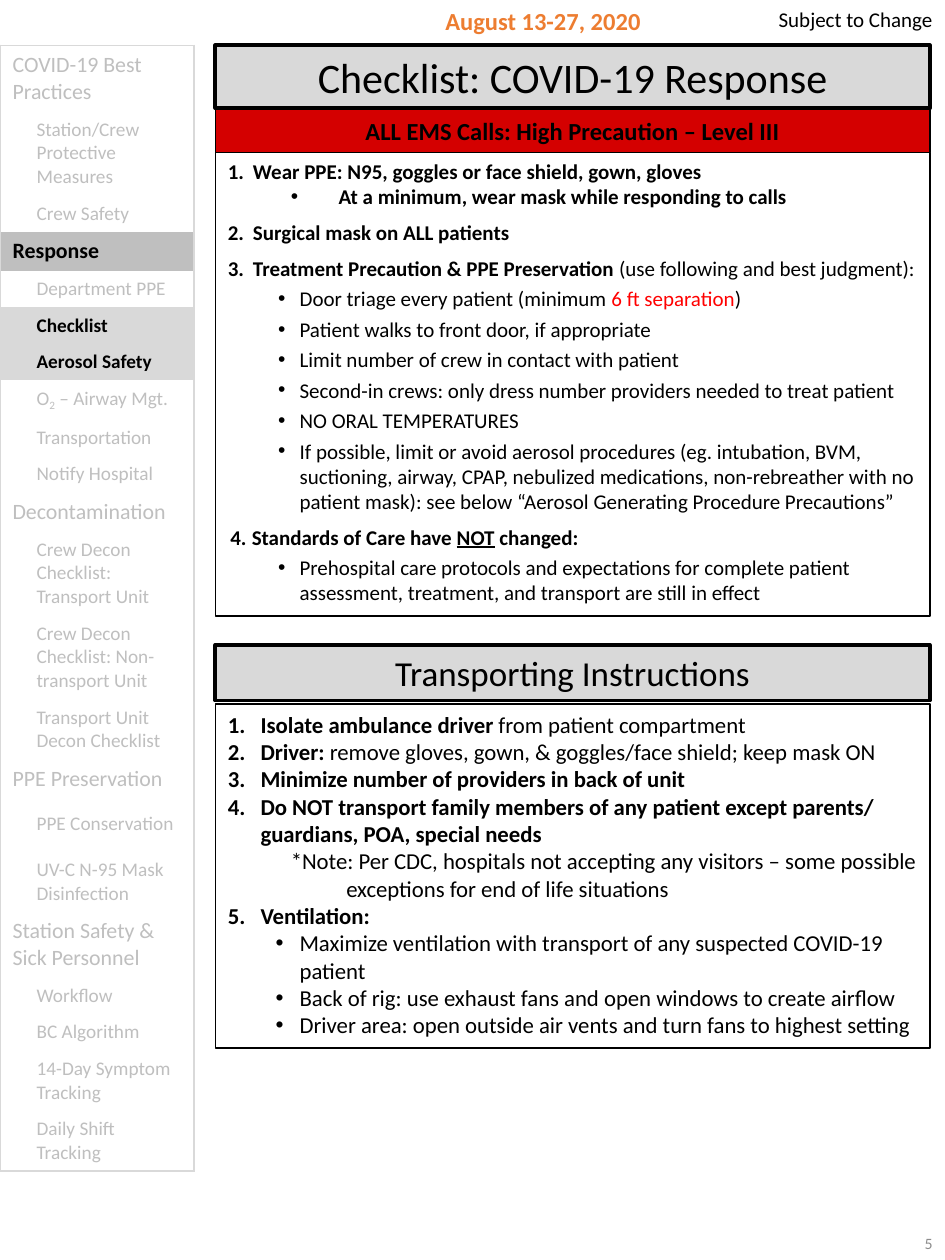
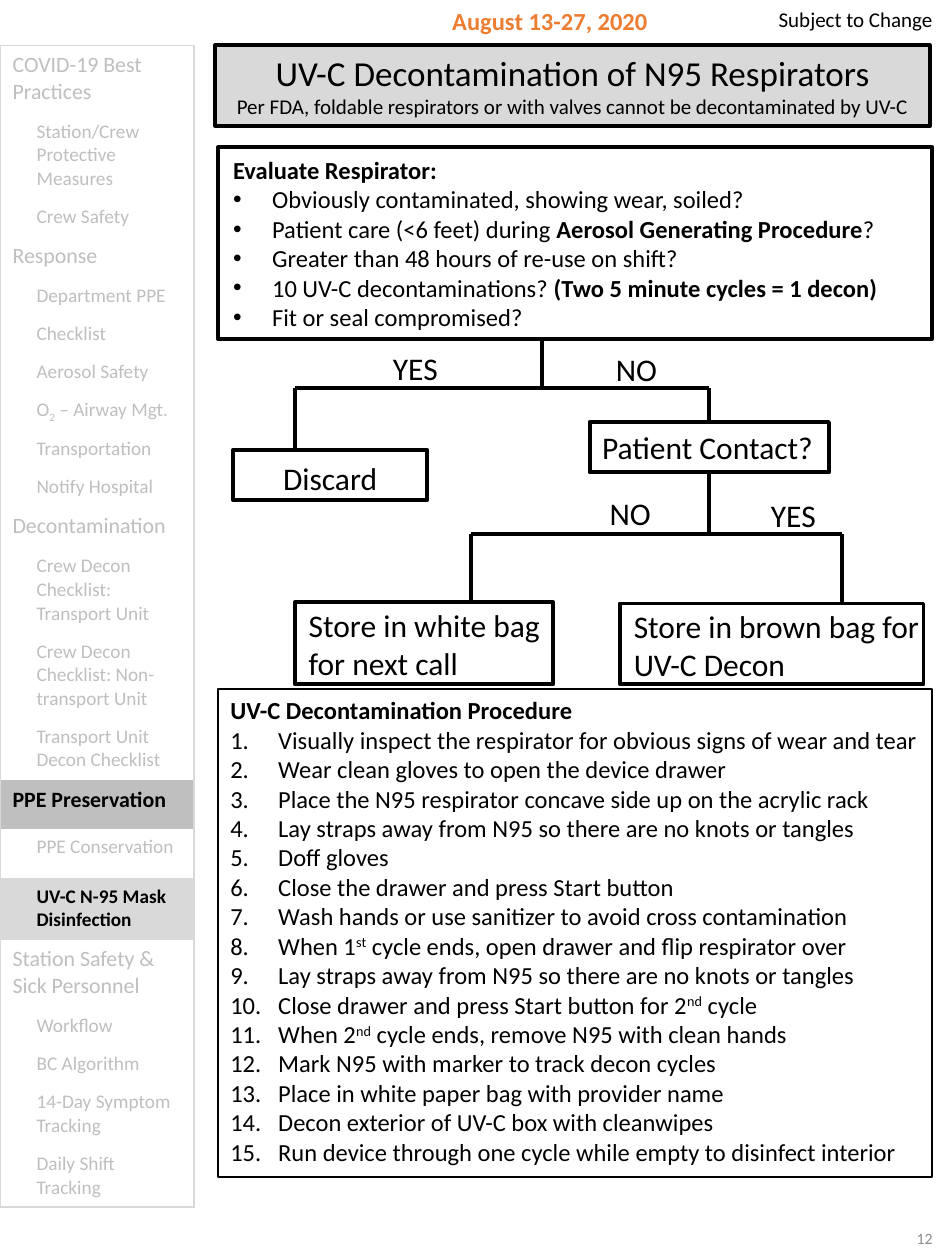
from dataclasses import dataclass

from lxml.etree import SubElement
from pptx import Presentation
from pptx.dml.color import RGBColor
from pptx.enum.shapes import MSO_CONNECTOR as Connector, MSO_SHAPE as Shape
from pptx.enum.text import MSO_ANCHOR as Anchor, MSO_AUTO_SIZE as AutoSize, PP_ALIGN as Align
from pptx.oxml.ns import qn
from pptx.util import Inches, Pt

# Shared look
FONT = "Calibri"
BLACK, RED, BAND_RED, ORANGE = "000000", "FF0000", "D40000", "ED7D31"
PALE, MUTED, PAGE_GREY = "D9D9D9", "BFBFBF", "8C8C8C"
THICK, THIN = 2.25, 1
NO_STYLE = "{2D5ABB26-0587-4C30-8999-92F81FD0307C}"

# Slide grid: 75 columns by 100 rows
WIDTH, HEIGHT = Inches(7.5), Inches(10)
COL, ROW = WIDTH / 75, HEIGHT / 100
MAIN_LEFT, MAIN_WIDTH, MAIN_TOP = 17.1, 56.7, 3.6

BOLD, PLAIN = {"bold": True}, {"bold": False}
SUB, SUPER = {"baseline": -25000}, {"baseline": 30000}

# Sidebar entries: label, level, lines of text (0 marks a tall row)
SECTIONS = [
    ("COVID-19 Best Practices", 0, 2), ("Station/Crew Protective Measures", 1, 3),
    ("Crew Safety", 1, 1), ("Response", 0, 1), ("Department PPE", 1, 1),
    ("Checklist", 1, 1), ("Aerosol Safety", 1, 1),
    (("O", ("2", SUB), " – Airway Mgt."), 1, 1), ("Transportation", 1, 1),
    ("Notify Hospital", 1, 1), ("Decontamination", 0, 1),
    ("Crew Decon Checklist: Transport Unit", 1, 3),
    ("Crew Decon Checklist: Non-transport Unit", 1, 3),
    ("Transport Unit Decon Checklist", 1, 2), ("PPE Preservation", 0, 0),
    ("PPE Conservation", 1, 0), ("UV-C N-95 Mask Disinfection", 1, 2),
    ("Station Safety & Sick Personnel", 0, 2), ("Workflow", 1, 1),
    ("BC Algorithm", 1, 1), ("14-Day Symptom Tracking", 1, 2),
    ("Daily Shift Tracking", 1, 2),
]


@dataclass
class Para:
    """Runs are strings, or pairs of a string and its own format."""
    runs: tuple
    left: float = 0
    hang: float = 0
    mark: object = None  # bullet character, or the number to start from
    before: float = 0
    level: int = 0
    size: float = 0


def rgb(color):
    return RGBColor.from_string(color)


def grid(left, top, width, height):
    return [round(v) for v in (left * COL, top * ROW, width * COL, height * ROW)]


def set_font(font, **values):
    color = values.pop("color", None)
    for key, value in values.items():
        setattr(font, key, value)
    if color:
        font.color.rgb = rgb(color)


def add_run(paragraph, piece, base):
    text, own = (piece, {}) if isinstance(piece, str) else piece
    values = {**base, **own}
    baseline = values.pop("baseline", None)
    run = paragraph.add_run()
    run.text = text
    set_font(run.font, **values)
    if baseline:
        run._r.get_or_add_rPr().set("baseline", str(baseline))


def write(frame, paras, size, color=BLACK, align=Align.LEFT, **style):
    for i, para in enumerate(paras):
        if isinstance(para, str):
            para = Para((para,))
        p = frame.paragraphs[0] if i == 0 else frame.add_paragraph()
        p.alignment, p.level = align, para.level
        props = p._p.get_or_add_pPr()
        props.set("marL", str(Inches(para.left)))
        props.set("indent", str(Inches(-para.hang)))
        if isinstance(para.mark, str):
            SubElement(props, qn("a:buFont"), typeface="Arial")
            SubElement(props, qn("a:buChar"), char=para.mark)
        elif para.mark:
            number = SubElement(props, qn("a:buAutoNum"), type="arabicPeriod")
            if para.mark > 1:
                number.set("startAt", str(para.mark))
        if para.before:
            p.space_before = Pt(para.before)
        base = {"name": FONT, "size": Pt(para.size or size), "color": color, **style}
        for piece in para.runs:
            add_run(p, piece, base)


def set_frame(frame, inset=(0.1, 0.05, 0.1, 0.05), wrap=True, anchor=Anchor.TOP):
    values = {"word_wrap": wrap, "auto_size": AutoSize.NONE, "vertical_anchor": anchor}
    sides = ("margin_left", "margin_top", "margin_right", "margin_bottom")
    values.update(zip(sides, map(Inches, inset)))
    for key, value in values.items():
        setattr(frame, key, value)


def paint(shape, fill, weight):
    if fill:
        shape.fill.solid()
        shape.fill.fore_color.rgb = rgb(fill)
    else:
        shape.fill.background()
    shape.line.color.rgb = rgb(BLACK)
    shape.line.width = Pt(weight)


def add_box(slide, place, paras, size, fill=None, weight=THICK,
            inset=(0.1, 0.05, 0.1, 0.05), **style):
    box = slide.shapes.add_shape(Shape.RECTANGLE, *grid(*place))
    box.shadow.inherit = False
    paint(box, fill, weight)
    set_frame(box.text_frame, inset)
    write(box.text_frame, paras, size, **style)


def add_label(slide, place, text, size, wrap=True, anchor=Anchor.TOP, **style):
    label = slide.shapes.add_textbox(*grid(*place))
    set_frame(label.text_frame, wrap=wrap, anchor=anchor)
    write(label.text_frame, [text], size, **style)


def add_line(slide, x1, y1, x2, y2):
    ends = [round(v) for v in (x1 * COL, y1 * ROW, x2 * COL, y2 * ROW)]
    line = slide.shapes.add_connector(Connector.STRAIGHT, *ends)
    line.line.color.rgb = rgb(BLACK)
    line.line.width = Pt(THICK)
    SubElement(line._element.spPr, qn("a:effectLst"))


def add_branch(slide, stem, top, bar, drops):
    """A stem down to a bar, and one drop (x, bottom) for each outcome."""
    add_line(slide, stem, top, stem, bar)
    add_line(slide, drops[0][0], bar, drops[-1][0], bar)
    for x, bottom in drops:
        add_line(slide, x, bar, x, bottom)


def add_border(cell, side):
    line = SubElement(cell._tc.get_or_add_tcPr(), qn(f"a:ln{side}"), w=str(Pt(1)))
    SubElement(SubElement(line, qn("a:solidFill")), qn("a:srgbClr"), val=PALE)


def add_sidebar(slide, active, pad):
    heights = [pad + (lines * (0.187 if level else 0.212) or 0.275)
               for _, level, lines in SECTIONS]
    frame = slide.shapes.add_table(len(SECTIONS), 1,
                                   *grid(0, MAIN_TOP, 15.4, sum(heights) * 10))
    table = frame.table
    table.first_row = table.horz_banding = False
    table._tbl.tblPr.find(qn("a:tableStyleId")).text = NO_STYLE
    last = len(SECTIONS) - 1
    for i, (label, level, _) in enumerate(SECTIONS):
        table.rows[i].height = Inches(heights[i])
        cell = table.cell(i, 0)
        for side in "LR" + "T" * (i == 0) + "B" * (i == last):
            add_border(cell, side)
        on = label in active
        if on:
            cell.fill.solid()
            cell.fill.fore_color.rgb = rgb(PALE if level else MUTED)
        else:
            cell.fill.background()
        runs = (label,) if isinstance(label, str) else label
        write(cell.text_frame, [Para(runs, left=0.19 * level)], 11 if level else 12.5,
              color=BLACK if on else MUTED, bold=on)


def start_slide(deck, title, size, height, active, pad, date_place, page, page_top):
    slide = deck.slides.add_slide(deck.slide_layouts[5])
    heading = slide.shapes.title
    heading.left, heading.top, heading.width, heading.height = grid(
        MAIN_LEFT, MAIN_TOP, MAIN_WIDTH, height)
    paint(heading, PALE, THICK)
    set_frame(heading.text_frame)
    write(heading.text_frame, title, size, align=Align.CENTER)
    add_sidebar(slide, active, pad)
    add_label(slide, date_place, "August 13-27, 2020", 14, color=ORANGE,
              align=Align.CENTER, bold=True)
    add_label(slide, (58.1, 0, 16.9, 3), "Subject to Change", 12, align=Align.RIGHT)
    add_label(slide, (58.1, page_top, 16.9, 5.3), page, 9, color=PAGE_GREY,
              align=Align.RIGHT, anchor=Anchor.MIDDLE)
    return slide


def step(number, *runs, before=6, left=0.2, hang=0.2):
    return Para(runs, left, hang, number, before)


def point(*runs, left=0.57, hang=0.17, before=0, level=0):
    return Para(runs, left, hang, "•", before, level)


def numbered(*runs, left=0.38):
    return Para(runs, left, left, 1)


def care(*runs):
    return point(*runs, before=3, level=1)


def build_response(deck):
    slide = start_slide(deck, ["Checklist: COVID-19 Response"], 24, 5,
                        ("Response", "Checklist", "Aerosol Safety"), 0.09,
                        (29.9, 0, 26.4, 5.7), "5", 96)
    # Checklist
    add_box(slide, (MAIN_LEFT, 12.1, MAIN_WIDTH, 36.8), [
        step(1, ("Wear PPE: N95, goggles or face shield, gown, gloves", BOLD), before=0),
        point(("At a minimum, wear mask while responding to calls", BOLD),
              left=0.88, hang=0.38, level=1),
        step(2, ("Surgical mask on ALL patients", BOLD)),
        step(3, ("Treatment Precaution & PPE Preservation ", BOLD),
             "(use following and best judgment):"),
        care("Door triage every patient (minimum ", ("6 ft separation", {"color": RED}), ")"),
        care("Patient walks to front door, if appropriate"),
        care("Limit number of crew in contact with patient"),
        care("Second-in crews: only dress number providers needed to treat patient"),
        care("NO ORAL TEMPERATURES"),
        care("If possible, limit or avoid aerosol procedures (eg. intubation, BVM, "
             "suctioning, airway, CPAP, nebulized medications, non-rebreather with no "
             "patient mask): see below “Aerosol Generating Procedure Precautions”"),
        step(4, ("Standards of Care have ", BOLD),
             ("NOT", {"bold": True, "underline": True}), (" changed:", BOLD),
             left=0.19, hang=0.17),
        care("Prehospital care protocols and expectations for complete patient "
             "assessment, treatment, and transport are still in effect"),
    ], 12, weight=THIN)
    add_box(slide, (MAIN_LEFT, 8.7, MAIN_WIDTH, 3.4),
            ["ALL EMS Calls: High Precaution – Level III"], 14, fill=BAND_RED,
            weight=THIN, align=Align.CENTER, bold=True)

    # Transporting
    add_box(slide, (MAIN_LEFT, 51.2, MAIN_WIDTH, 4.4), ["Transporting Instructions"], 20,
            fill=PALE, align=Align.CENTER)
    rule, vent = {"left": 0.26}, {"hang": 0.19}
    add_box(slide, (MAIN_LEFT, 55.9, MAIN_WIDTH, 27.3), [
        numbered(("Isolate ambulance driver ", BOLD), "from patient compartment", **rule),
        numbered(("Driver: ", BOLD),
                 "remove gloves, gown, & goggles/face shield; keep mask ON", **rule),
        numbered(("Minimize number of providers in back of unit", BOLD), **rule),
        numbered(("Do NOT transport family members of any patient except parents/ "
                  "guardians, POA, special needs", BOLD), **rule),
        Para(("*Note: Per CDC, hospitals not accepting any visitors – some possible "
              "exceptions for end of life situations",), 0.94, 0.44, level=1),
        numbered(("Ventilation:", BOLD), **rule),
        point("Maximize ventilation with transport of any suspected COVID-19 patient", **vent),
        point("Back of rig: use exhaust fans and open windows to create airflow", **vent),
        point("Driver area: open outside air vents and turn fans to highest setting", **vent),
    ], 13, weight=THIN)


def build_decontamination(deck):
    note = "Per FDA, foldable respirators or with valves cannot be decontaminated by UV-C"
    slide = start_slide(deck, ["UV-C Decontamination of N95 Respirators",
                               Para((note,), size=12)], 20, 6.4,
                        ("PPE Preservation", "UV-C N-95 Mask Disinfection"), 0.115,
                        (31, 0, 25.3, 3.4), "12", 95.6)
    # Procedure
    add_box(slide, (17.3, 54.7, MAIN_WIDTH, 38.7), [
        Para((("UV-C Decontamination Procedure", BOLD),)),
        numbered("Visually inspect the respirator for obvious signs of wear and tear"),
        numbered("Wear clean gloves to open the device drawer"),
        numbered("Place the N95 respirator concave side up on the acrylic rack"),
        numbered("Lay straps away from N95 so there are no knots or tangles"),
        numbered("Doff gloves"),
        numbered("Close the drawer and press Start button"),
        numbered("Wash hands or use sanitizer to avoid cross contamination"),
        numbered("When 1", ("st", SUPER), " cycle ends, open drawer and flip respirator over"),
        numbered("Lay straps away from N95 so there are no knots or tangles"),
        numbered("Close drawer and press Start button for 2", ("nd", SUPER), " cycle"),
        numbered("When 2", ("nd", SUPER), " cycle ends, remove N95 with clean hands"),
        numbered("Mark N95 with marker to track decon cycles"),
        numbered("Place in white paper bag with provider name"),
        numbered("Decon exterior of UV-C box with cleanwipes"),
        numbered("Run device through one cycle while empty to disinfect interior"),
    ], 14, weight=THIN)

    # Evaluation
    check = {"left": 0.31, "hang": 0.31}
    add_box(slide, (17.3, 11.7, MAIN_WIDTH, 15.2), [
        Para((("Evaluate Respirator:", BOLD),)),
        point("Obviously contaminated, showing wear, soiled?", **check),
        point("Patient care (<6 feet) during ", ("Aerosol Generating Procedure", BOLD),
              "?", **check),
        point("Greater than 48 hours of re-use on shift?", **check),
        point("10 UV-C decontaminations? ", ("(Two 5 minute cycles = 1 decon)", BOLD), **check),
        point("Fit or seal compromised?", **check),
    ], 14, inset=(0.12, 0.06, 0.1, 0.05))

    # Decision tree
    add_branch(slide, 43, 27, 30.8, [(23.4, 35.7), (56.3, 33.5)])
    add_branch(slide, 56.3, 37.5, 42.4, [(37.4, 47.8), (66.8, 47.9)])
    for left, top, answer in ((30.2, 27.2, "YES"), (47.9, 27.3, "NO"),
                              (60.2, 38.9, "YES"), (47.4, 38.7, "NO")):
        add_label(slide, (left, top, 5.6, 4), answer, 18, wrap=False)
    add_box(slide, (46.8, 33.5, 19, 4), ["Patient Contact?"], 18, inset=(0.1, 0.05, 0, 0.05))
    add_box(slide, (18.5, 35.7, 15.4, 4), ["Discard"], 18, align=Align.CENTER,
            inset=(0.1, 0.07, 0.1, 0))
    bag = {"size": 18, "inset": (0.11, 0.03, 0, 0)}
    add_box(slide, (23.4, 47.8, 20.5, 6.5), ["Store in white bag", "for next call"], **bag)
    add_box(slide, (49.2, 47.9, 24.1, 6.4), ["Store in brown bag for UV-C Decon"], **bag)


def main():
    deck = Presentation()
    deck.slide_width, deck.slide_height = WIDTH, HEIGHT
    build_response(deck)
    build_decontamination(deck)
    deck.save("out.pptx")


if __name__ == "__main__":
    main()
